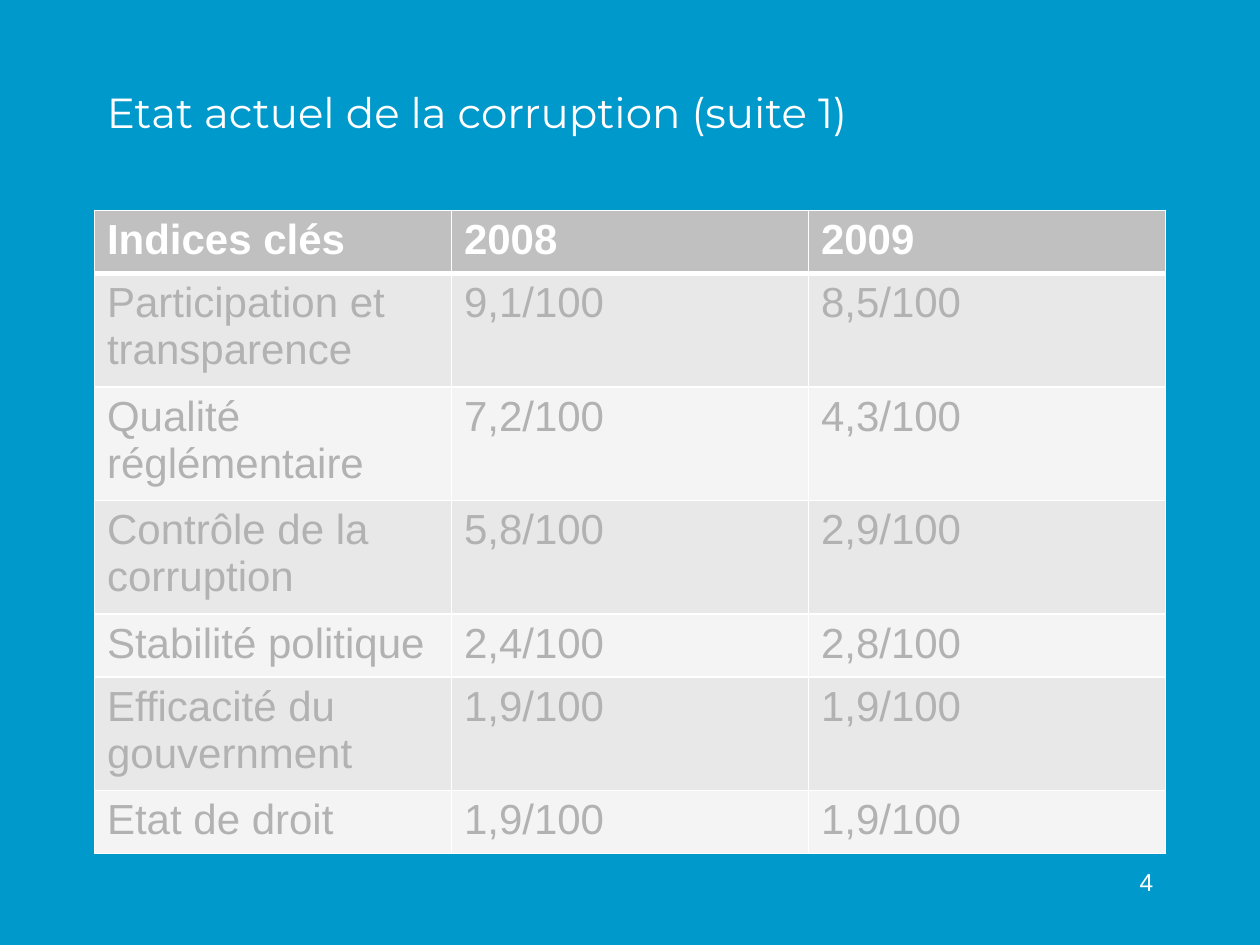
from lxml.etree import SubElement
from pptx import Presentation
from pptx.dml.color import RGBColor
from pptx.enum.text import MSO_ANCHOR, PP_ALIGN
from pptx.oxml.ns import qn
from pptx.util import Inches, Pt

WHITE = "FFFFFF"
HEADER_FILL = "C0C0C0"
BAND_FILLS = ("E8E8E8", "F4F4F4")
BODY_TEXT = "B2B2B2"

ROWS = [
    ("Indices clés", "2008", "2009"),
    ("Participation et transparence", "9,1/100", "8,5/100"),
    ("Qualité réglémentaire", "7,2/100", "4,3/100"),
    ("Contrôle de la corruption", "5,8/100", "2,9/100"),
    ("Stabilité politique", "2,4/100", "2,8/100"),
    ("Efficacité du gouvernment", "1,9/100", "1,9/100"),
    ("Etat de droit", "1,9/100", "1,9/100"),
]


def paint(fill, color):
    fill.solid()
    fill.fore_color.rgb = RGBColor.from_string(color)


def add_span(para, text, size, color, font="Arial", bold=False):
    span = para.add_run()
    span.text = text
    span.font.size = Pt(size)
    span.font.name = font
    span.font.bold = bold
    span.font.color.rgb = RGBColor.from_string(color)


def add_text(page, left, top, width, height, text, size, font="Arial",
             align=PP_ALIGN.LEFT, anchor=MSO_ANCHOR.TOP):
    """Add a white one-line text box and return its paragraph."""
    box = page.shapes.add_textbox(Inches(left), Inches(top), Inches(width), Inches(height))
    box.text_frame.word_wrap = True
    box.text_frame.vertical_anchor = anchor
    para = box.text_frame.paragraphs[0]
    para.alignment = align
    add_span(para, text, size, WHITE, font)
    return para


def add_borders(cell, widths):
    """Draw white borders; widths maps a side letter to points."""
    properties = cell._tc.get_or_add_tcPr()
    for side, width in widths.items():
        line = SubElement(properties, qn(f"a:ln{side}"), w=str(Pt(width)))
        solid = SubElement(line, qn("a:solidFill"))
        SubElement(solid, qn("a:srgbClr"), val=WHITE)


def add_index_table(page):
    table = page.shapes.add_table(len(ROWS), len(ROWS[0]), Inches(0.75), Inches(1.67),
                                  Inches(8.5), Inches(0.41 * len(ROWS))).table
    for r, values in enumerate(ROWS):
        header = r == 0
        color = WHITE if header else BODY_TEXT
        fill = HEADER_FILL if header else BAND_FILLS[(r - 1) % 2]
        widths = {"L": 1, "R": 1, "T": 3 if r == 1 else 1, "B": 3 if header else 1}
        for c, value in enumerate(values):
            cell = table.cell(r, c)
            add_borders(cell, widths)
            paint(cell.fill, fill)
            add_span(cell.text_frame.paragraphs[0], value, 24, color, bold=header)


def main():
    deck = Presentation()
    deck.slide_width, deck.slide_height = Inches(10), Inches(7.5)
    page = deck.slides.add_slide(deck.slide_layouts[6])
    paint(page.background.fill, "0099CC")

    title = add_text(page, 0.75, 0.75, 8.5, 0.67, "Etat actuel de la corruption (suite 1)",
                     24, "Montserrat", anchor=MSO_ANCHOR.MIDDLE)
    title.add_line_break()
    title.font.size = Pt(24)
    title.font.name = "Montserrat"
    add_index_table(page)
    add_text(page, 7.17, 6.83, 2.08, 0.5, "4", 14, align=PP_ALIGN.RIGHT)

    deck.save("out.pptx")


if __name__ == "__main__":
    main()
